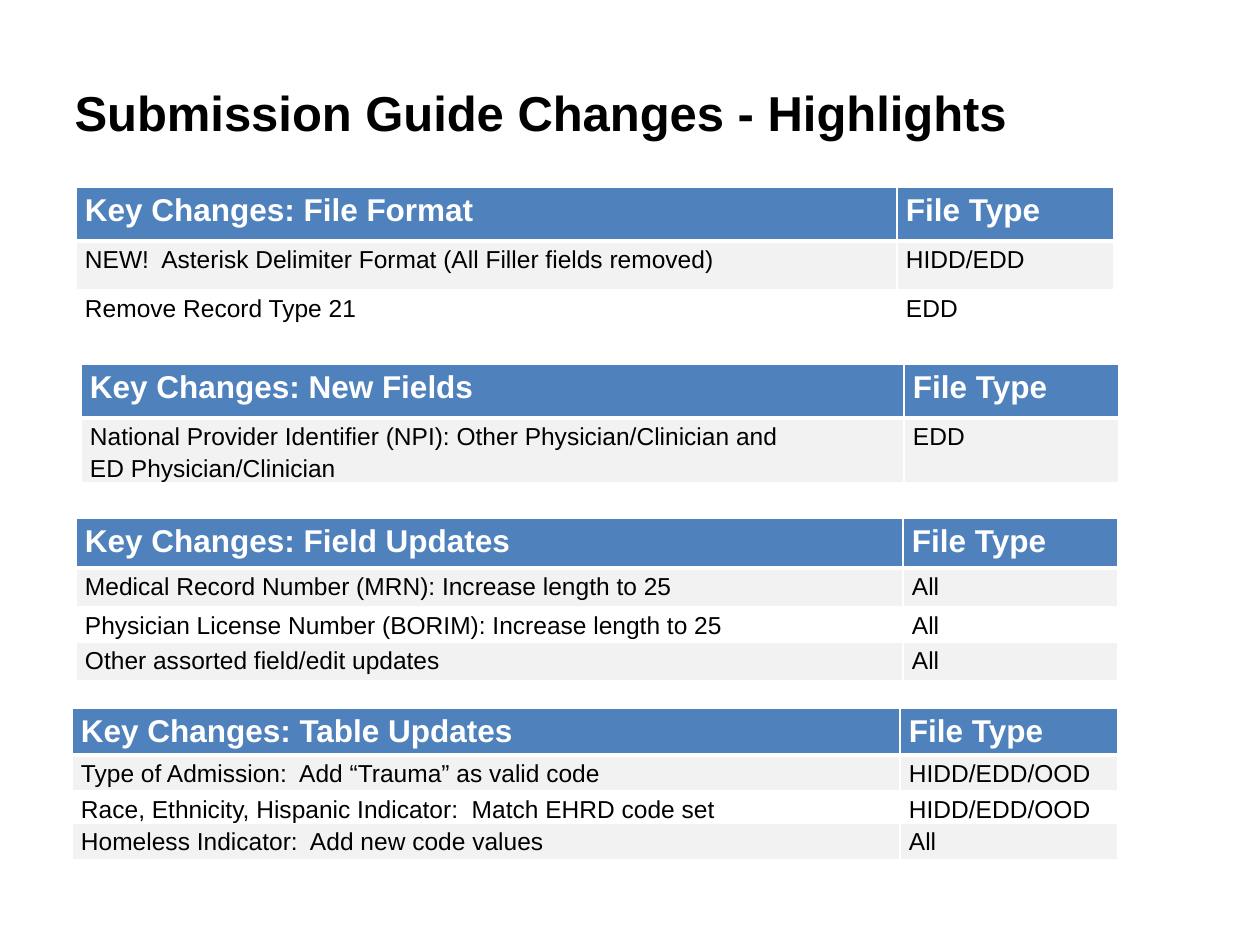
from lxml.etree import SubElement
from pptx import Presentation
from pptx.dml.color import RGBColor
from pptx.enum.text import MSO_ANCHOR, PP_ALIGN
from pptx.oxml.ns import qn
from pptx.util import Pt

PX = 914400 / 126
COLORS = {"header": "4F81BD", "band": "F2F2F2", "white": "FFFFFF", "text": "000000"}

# Each table: left, top, column widths, row heights (px), topic, body rows
TABLES = [
    (76, 187, (821, 217), (54, 49, 49), "File Format", [
        ("NEW!  Asterisk Delimiter Format (All Filler fields removed)", "HIDD/EDD"),
        ("Remove Record Type 21", "EDD")]),
    (81, 364, (823, 215), (54, 63), "New Fields", [
        ("National Provider Identifier (NPI): Other Physician/Clinician and\v"
         "ED Physician/Clinician", "EDD")]),
    (76, 518, (827, 215), (50, 39, 35, 39), "Field Updates", [
        ("Medical Record Number (MRN): Increase length to 25", "All"),
        ("Physician License Number (BORIM): Increase length to 25", "All"),
        ("Other assorted field/edit updates", "All")]),
    (72, 708, (828, 218), (47, 36, 32, 36), "Table Updates", [
        ("Type of Admission:  Add “Trauma” as valid code", "HIDD/EDD/OOD"),
        ("Race, Ethnicity, Hispanic Indicator:  Match EHRD code set", "HIDD/EDD/OOD"),
        ("Homeless Indicator:  Add new code values", "All")]),
]


def px(n):
    return round(n * PX)


def rgb(name):
    return RGBColor.from_string(COLORS[name])


def write(tf, text, size, color="text", bold=False, line=None, after=None):
    p = tf.paragraphs[0]
    p.text = text
    p.alignment = PP_ALIGN.LEFT
    if line:
        p.line_spacing = line
    if after:
        p.space_after = Pt(after)
    for r in p.runs:
        r.font.name, r.font.size, r.font.bold = "Arial", Pt(size), bold
        r.font.color.rgb = rgb(color)


def add_border(cell, side, width):
    ln = SubElement(cell._tc.get_or_add_tcPr(), qn(f"a:ln{side}"), w=str(Pt(width)))
    SubElement(SubElement(ln, qn("a:solidFill")), qn("a:srgbClr"), val=COLORS["white"])


def format_cell(cell, text, row):
    header = row == 0
    cell.margin_left = cell.margin_right = px(9)
    cell.margin_top, cell.margin_bottom = px(1), 0
    for side in "LRTB" if header else "LRB":
        add_border(cell, side, 3 if header and side == "B" else 1)
    cell.fill.solid()
    cell.fill.fore_color.rgb = rgb("header" if header else "band" if row % 2 else "white")
    write(cell.text_frame, text, 18 if header else 14, "white" if header else "text",
          bold=header, line=1.15, after=10)


def add_changes_table(s, x, y, widths, heights, topic, body):
    rows = [(f"Key Changes: {topic}", "File Type"), *body]
    table = s.shapes.add_table(len(rows), len(widths), px(x), px(y),
                               px(sum(widths)), px(sum(heights))).table
    table.horz_banding = False
    for col, width in zip(table.columns, widths):
        col.width = px(width)
    for i, (row, height) in enumerate(zip(table.rows, heights)):
        row.height = px(height)
        for cell, text in zip(row.cells, rows[i]):
            format_cell(cell, text, i)


def add_title(s, x, y, w, h):
    sp = s.shapes.title
    sp.left, sp.top, sp.width, sp.height = px(x), px(y), px(w), px(h)
    tf = sp.text_frame
    tf.word_wrap = True
    tf.vertical_anchor = MSO_ANCHOR.MIDDLE
    write(tf, "Submission Guide Changes - Highlights", 28, bold=True)


def main():
    prs = Presentation()
    prs.slide_width, prs.slide_height = px(1260), px(945)
    s = prs.slides.add_slide(prs.slide_layouts[5])
    add_title(s, 62, 51, 1056, 122)
    for table in TABLES:
        add_changes_table(s, *table)
    prs.save("out.pptx")


if __name__ == "__main__":
    main()
